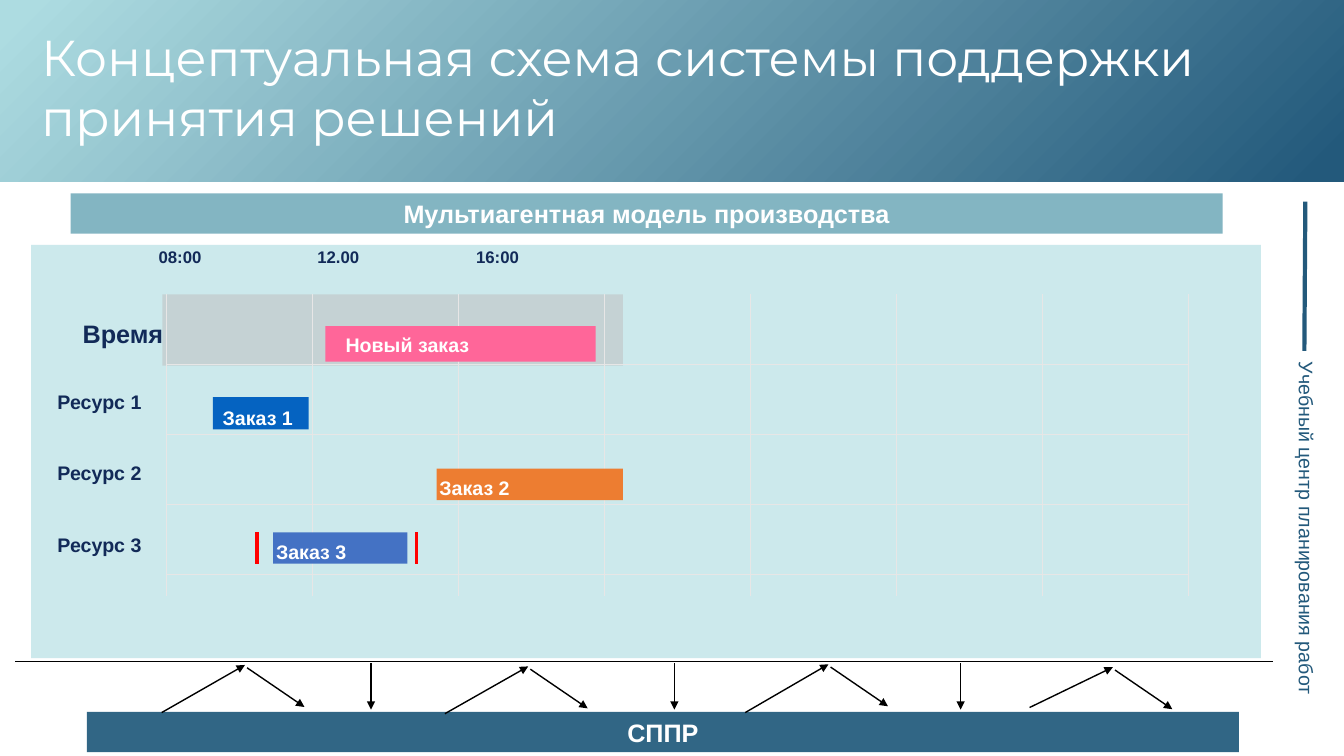
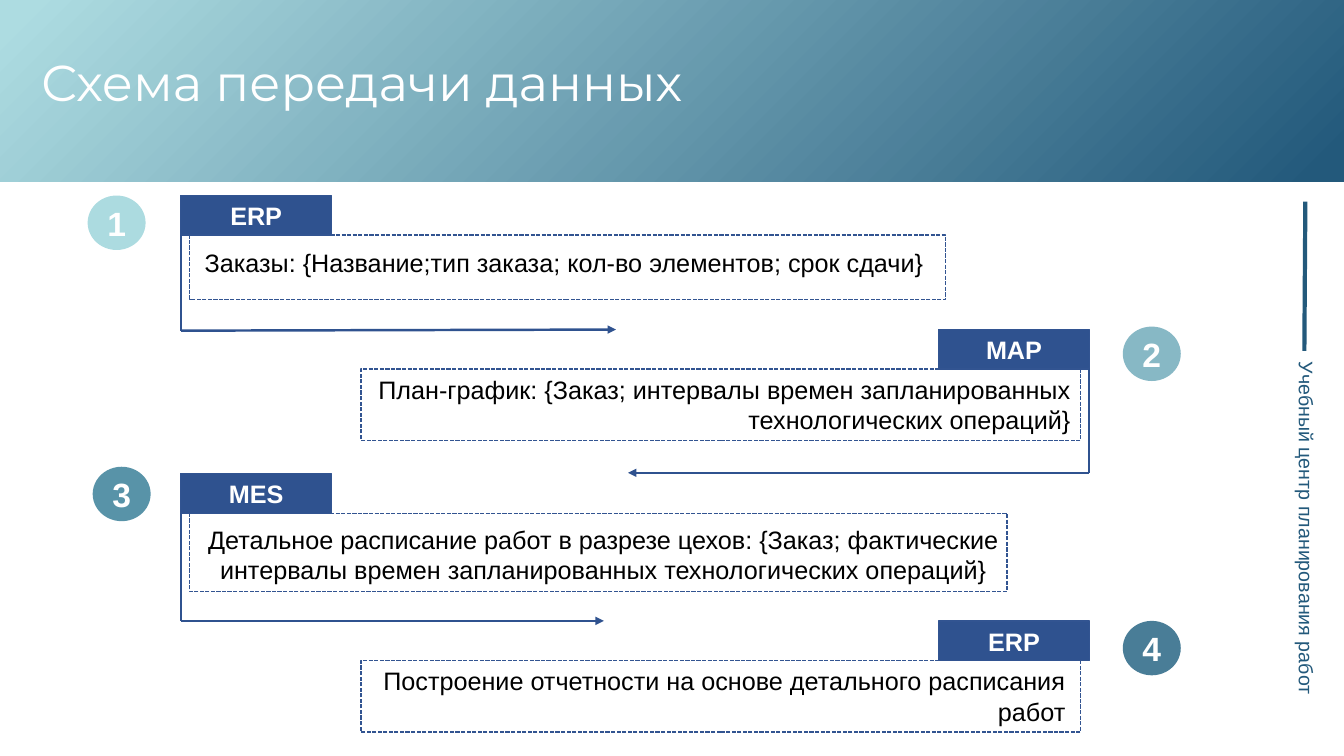
from lxml import etree
from pptx import Presentation
from pptx.dml.color import RGBColor
from pptx.enum.dml import MSO_LINE
from pptx.enum.shapes import MSO_CONNECTOR, MSO_SHAPE as SHAPE
from pptx.enum.text import MSO_ANCHOR as ANCHOR, PP_ALIGN as ALIGN
from pptx.oxml.ns import qn
from pptx.util import Pt

DEEP, PALE = "23597B", "ADDCE1"
NAVY, GRID, BLACK, WHITE = "122A58", "E7E6E6", "000000", "FFFFFF"
TAB_FILL, TAB_LINE = "2F528F", "325491"
SIDE_CAPTION = "Учебный центр планирования работ"
INSETS = (7.2, 3.6, 7.2, 3.6)
FLUSH = (0, 0, 0, 0)


def rgb(value):
    return RGBColor.from_string(value)


def write(shape, text, size, color, bold=False, align=ALIGN.LEFT,
          anchor=ANCHOR.TOP, font="Arial", insets=INSETS):
    frame = shape.text_frame
    left, top, right, bottom = map(Pt, insets)
    frame_format = {
        "word_wrap": True, "vertical_anchor": anchor,
        "margin_left": left, "margin_top": top,
        "margin_right": right, "margin_bottom": bottom,
    }
    for name, value in frame_format.items():
        setattr(frame, name, value)
    paragraph = frame.paragraphs[0]
    paragraph.alignment = align
    run = paragraph.add_run()
    run.text = text
    for name, value in {"name": font, "size": Pt(size), "bold": bold}.items():
        setattr(run.font, name, value)
    run.font.color.rgb = rgb(color)


def add_label(slide, box, text, size, color, **text_format):
    write(slide.shapes.add_textbox(*map(Pt, box)), text, size, color, **text_format)


def add_block(slide, box, fill=None, outline=None, kind=SHAPE.RECTANGLE, opacity=None):
    shape = slide.shapes.add_shape(kind, *map(Pt, box))
    shape.shadow.inherit = False
    if fill:
        shape.fill.solid()
        shape.fill.fore_color.rgb = rgb(fill)
    else:
        shape.fill.background()
    if opacity:
        color = shape._element.spPr.find(".//" + qn("a:srgbClr"))
        etree.SubElement(color, qn("a:alpha"), val=str(opacity * 1000))
    if outline:
        shape.line.color.rgb = rgb(outline)
        shape.line.width = Pt(1)
    else:
        shape.line.fill.background()
    return shape


def add_line(slide, start, end, color, width, arrow=False):
    line = slide.shapes.add_connector(MSO_CONNECTOR.STRAIGHT, *map(Pt, (*start, *end)))
    line.line.color.rgb = rgb(color)
    line.line.width = Pt(width)
    if arrow:
        etree.SubElement(line.get_or_add_ln(), qn("a:tailEnd"), type="triangle")
    etree.SubElement(line._element.spPr, qn("a:effectLst"))


def add_base_slide(presentation, title, title_box):
    """Add a slide with the gradient header, title and side caption."""
    slide = presentation.slides.add_slide(presentation.slide_layouts[6])
    header = add_block(slide, (0, 0, 960, 129.6))
    header.fill.gradient()
    header.fill.gradient_angle = 315
    for stop, color, position in zip(header.fill.gradient_stops, (PALE, DEEP), (0.02, 0.98)):
        stop.color.rgb = rgb(color)
        stop.position = position
    add_line(slide, (932.4, 144), (931.7, 250.6), DEEP, 3)
    caption = add_block(slide, (799.2, 373, 267.8, 24.5), WHITE)
    caption.rotation = 90
    write(caption, SIDE_CAPTION, 14, DEEP)
    add_label(slide, title_box, title, 36, WHITE, font="Montserrat")
    return slide


def add_banner(slide, left, top, text, fill):
    banner = add_block(slide, (left, top, 823, 28.8), fill)
    write(banner, text, 18, WHITE, bold=True, align=ALIGN.CENTER, anchor=ANCHOR.MIDDLE)


def add_schedule_grid(slide):
    left, top, right, bottom = 118.8, 210.2, 848.9, 425.5
    for column in range(8):
        x = left + column * (right - left) / 7
        add_line(slide, (x, top), (x, bottom), GRID, 0.75)
    for row in range(4):
        y = 260.6 + row * 50
        add_line(slide, (left, y), (right, y), GRID, 0.75)


def add_order(slide, box, text, fill, indent, drop):
    write(add_block(slide, box, fill), text, 14, WHITE, bold=True,
          insets=(indent, drop, 0, 0))


def add_exchange_arrows(slide):
    """Draw the arrows between the production model and the decision system."""
    peaks = [(175, 475, 509), (377.3, 476, 509.8), (591.8, 474.5, 509), (794.9, 476.6, 505.4)]
    for x, y, base in peaks:
        add_line(slide, (x - 59.5, base), (x, y), BLACK, 1, arrow=True)
        add_line(slide, (x + 1.5, y + 2), (x + 42.5, y + 30), BLACK, 1, arrow=True)
    for x in (265, 481.7, 686.2):
        add_line(slide, (x, 473.8), (x, 506.9), BLACK, 1, arrow=True)


def build_concept_slide(presentation):
    slide = add_base_slide(
        presentation, "Концептуальная схема системы поддержки принятия решений",
        (22.3, 15.1, 923, 94.3))
    add_block(slide, (22.3, 175, 878.4, 295.2), PALE, opacity=62)
    add_block(slide, (116, 210.2, 329, 51), "C0C0C0", opacity=54)
    add_schedule_grid(slide)

    for index, hour in enumerate(("08:00", "12.00", "16:00")):
        add_label(slide, (113.3 + index * 113.4, 176.4, 50, 14.4), hour, 12, NAVY,
                  bold=True, insets=FLUSH)
    add_label(slide, (59, 227.5, 87, 21.6), "Время", 18, NAVY, bold=True, insets=FLUSH)
    for index in range(3):
        add_label(slide, (41, 278.3 + index * 51.1, 87, 17.3), f"Ресурс {index + 1}", 14, NAVY,
                  bold=True, insets=FLUSH)

    orders = [
        ((152, 283.7, 68.4, 23), "Заказ 1", "0563C1", 7, 6.2),
        ((311.8, 334.8, 133.2, 22.5), "Заказ 2", "ED7D31", 2, 5),
        ((195.2, 380.2, 95.8, 22.5), "Заказ 3", "4472C4", 2, 5.8),
        ((232.4, 233, 193, 25.4), "Новый заказ", "FF6699", 14.4, 5),
    ]
    for order in orders:
        add_order(slide, *order)
    for x in (183.6, 297.4):
        add_line(slide, (x, 380.2), (x, 403.2), "FF0000", 2.25)

    add_line(slide, (10.8, 472.3), (909.4, 472.3), BLACK, 0.5)
    add_banner(slide, 50.4, 138.2, "Мультиагентная модель производства", "83B5C2")
    add_banner(slide, 62, 508.5, "СППР", "316685")
    add_exchange_arrows(slide)


def add_badge(slide, number, left, top, fill):
    badge = add_block(slide, (left, top, 41.4, 38.9), fill, kind=SHAPE.OVAL)
    write(badge, str(number), 24, WHITE, bold=True, align=ALIGN.CENTER, anchor=ANCHOR.MIDDLE)


def add_message(slide, tab_left, tab_top, system, box_left, width, height, text, align, insets):
    """Draw a system tab with its dashed message box below."""
    tab = add_block(slide, (tab_left, tab_top, 108, 28.2), TAB_FILL, TAB_LINE)
    write(tab, system, 18, WHITE, bold=True, align=ALIGN.CENTER, anchor=ANCHOR.MIDDLE)
    box = add_block(slide, (box_left, tab_top + 28.2, width, height), outline=TAB_LINE)
    box.line.dash_style = MSO_LINE.SQUARE_DOT
    write(box, text, 18, BLACK, align=align, insets=insets)


def add_flow(slide, x, top, bottom, end):
    """Draw the line down from a tab and the arrow to the next one."""
    add_line(slide, (x, top), (x, bottom), TAB_FILL, 1.75)
    add_line(slide, (x, bottom), end, TAB_FILL, 1.75, arrow=True)


def build_transfer_slide(presentation):
    slide = add_base_slide(presentation, "Схема передачи данных", (22.3, 33.1, 923, 51.1))
    badges = [(62.6, 139.7, "ACDBE0"), (802, 233.3, "87B8C5"),
              (66.2, 333.4, "5893A8"), (802, 443.5, "497D97")]
    for number, badge in enumerate(badges, 1):
        add_badge(slide, number, *badge)

    messages = [
        (129, 139.7, "ERP", 135.4, 540, 46,
         "Заказы: {Название;тип заказа; кол-во элементов; срок сдачи}",
         ALIGN.CENTER, (7.2, 8.4, 12, 3.6)),
        (670.3, 235.4, "MAP", 257.8, 514, 51,
         "План-график: {Заказ; интервалы времен запланированных технологических операций}",
         ALIGN.RIGHT, INSETS),
        (129, 338.4, "MES", 135.4, 584, 56,
         "Детальное расписание работ в разрезе цехов: {Заказ; фактические "
         "интервалы времен запланированных технологических операций}",
         ALIGN.CENTER, (10.8, 7.9, 3.6, 3.6)),
        (670.3, 443.7, "ERP", 257.8, 514, 51,
         "Построение отчетности на основе детального расписания работ",
         ALIGN.RIGHT, (7.2, 3.6, 10.8, 3.6)),
    ]
    for message in messages:
        add_message(slide, *message)

    add_flow(slide, 129.3, 167.8, 236.2, (440, 235.4))
    add_flow(slide, 777.8, 263.5, 337.7, (448.6, 337.7))
    add_flow(slide, 129.3, 366.5, 443.5, (431.3, 443.5))


def main():
    presentation = Presentation()
    presentation.slide_width, presentation.slide_height = Pt(960), Pt(540)
    build_concept_slide(presentation)
    build_transfer_slide(presentation)
    presentation.save("out.pptx")


if __name__ == "__main__":
    main()
